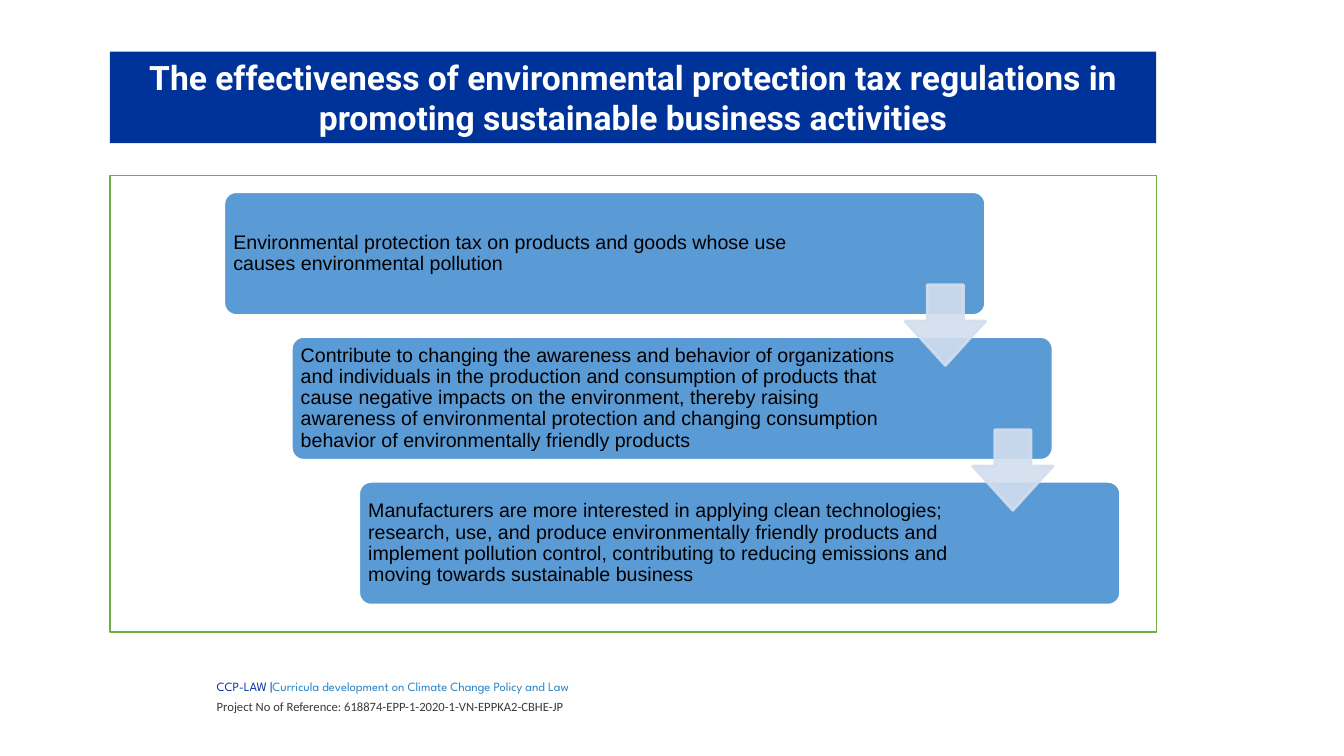
import pptx
import pptx.dml.color
import pptx.enum.shapes
import pptx.enum.text
import pptx.oxml.ns
import pptx.util
from lxml import etree

Cm, Pt = pptx.util.Cm, pptx.util.Pt
SHAPES = pptx.enum.shapes.MSO_SHAPE
ANCHOR = pptx.enum.text.MSO_ANCHOR
ALIGN = pptx.enum.text.PP_ALIGN

TITLE = ("The effectiveness of environmental protection tax regulations in "
         "promoting sustainable business activities")

# Wording and text width (cm) of each step in the cascade
STEPS = [
    ("Environmental protection tax on products and goods whose use causes "
     "environmental pollution", 15.82),
    ("Contribute to changing the awareness and behavior of organizations and "
     "individuals in the production and consumption of products that cause "
     "negative impacts on the environment, thereby raising awareness of "
     "environmental protection and changing consumption behavior of "
     "environmentally friendly products", 15.29),
    ("Manufacturers are more interested in applying clean technologies; "
     "research, use, and produce environmentally friendly products and "
     "implement pollution control, contributing to reducing emissions and "
     "moving towards sustainable business", 15.29),
]

FOOTER = [
    [("CCP-LAW |", "League Spartan", "003399"),
     ("Curricula development on Climate Change Policy and Law",
      "League Spartan", "2683C6")],
    [("Project No of Reference: 618874-EPP-1-2020-1-VN-EPPKA2-CBHE-JP",
      "Calibri", "3B3838")],
]


def rgb(value):
    return pptx.dml.color.RGBColor.from_string(value)


def set_opacity(shape, percent):
    """Make both the fill and the line of a shape partly transparent."""
    for color in shape._element.spPr.iter(pptx.oxml.ns.qn("a:srgbClr")):
        alpha = etree.SubElement(color, pptx.oxml.ns.qn("a:alpha"))
        alpha.set("val", str(percent * 1000))


class SlideBuilder:
    NAVY, BLUE, PALE, GREEN = "003399", "5B9BD5", "D2DEEF", "70AD47"
    WHITE, BLACK = "FFFFFF", "000000"

    def __init__(self, slide):
        self.slide = slide

    def shape(self, kind, left, top, width, height, fill, line=None,
              line_width=1, adjustments=()):
        shape = self.slide.shapes.add_shape(
            kind, Cm(left), Cm(top), Cm(width), Cm(height))
        shape.shadow.inherit = False
        shape.fill.solid()
        shape.fill.fore_color.rgb = rgb(fill)
        if line:
            shape.line.color.rgb = rgb(line)
            shape.line.width = Pt(line_width)
        else:
            shape.line.fill.background()
        for index, value in enumerate(adjustments):
            shape.adjustments[index] = value
        return shape

    def font(self, run, name, size, color, bold=False):
        run.font.name = name
        run.font.size = Pt(size)
        run.font.color.rgb = rgb(color)
        run.font.bold = bold

    def title(self, text, left, top, width, height):
        frame = self.shape(SHAPES.RECTANGLE, left, top, width, height,
                           self.NAVY).text_frame
        frame.text = text
        frame.word_wrap = True
        frame.vertical_anchor = ANCHOR.TOP
        paragraph = frame.paragraphs[0]
        paragraph.alignment = ALIGN.CENTER
        self.font(paragraph.runs[0], "Roboto", 24, self.WHITE, bold=True)

    def step(self, text, left, top, text_width):
        self.shape(SHAPES.ROUNDED_RECTANGLE, left, top, 19.2, 3.12,
                   self.BLUE, self.WHITE, 2, [0.1])
        frame = self.slide.shapes.add_textbox(
            Cm(left + 0.09), Cm(top + 0.09), Cm(text_width), Cm(2.94)).text_frame
        frame.text = text
        frame.word_wrap = True
        frame.vertical_anchor = ANCHOR.MIDDLE
        frame.margin_left = frame.margin_right = Cm(0.15)
        frame.margin_top = frame.margin_bottom = Cm(0.15)
        paragraph = frame.paragraphs[0]
        paragraph.line_spacing = 0.9
        self.font(paragraph.runs[0], "Arial", 14, self.BLACK)

    def arrow(self, left, top):
        arrow = self.shape(SHAPES.DOWN_ARROW, left, top, 2.03, 2.03,
                           self.PALE, self.PALE, 2)
        arrow.adjustments[0] = 0.45
        arrow.adjustments[1] = 0.55
        set_opacity(arrow, 90)

    def footer(self, lines, left, top, column_widths, height):
        table = self.slide.shapes.add_table(
            1, len(column_widths), Cm(left), Cm(top),
            Cm(sum(column_widths)), Cm(height)).table
        table.first_row = table.horz_banding = False
        for column, width in zip(table.columns, column_widths):
            column.width = Cm(width)
        for cell in table.iter_cells():
            cell.fill.background()
            cell.margin_left = cell.margin_right = Cm(0.18)
            cell.margin_top = cell.margin_bottom = 0
            cell.vertical_anchor = ANCHOR.MIDDLE
        frame = table.cell(0, 1).text_frame
        for index, line in enumerate(lines):
            paragraph = frame.add_paragraph() if index else frame.paragraphs[0]
            paragraph.line_spacing = 1.07
            if index:
                paragraph.space_before = Pt(3)
            for text, name, color in line:
                run = paragraph.add_run()
                run.text = text
                self.font(run, name, 9, color)


def main():
    presentation = pptx.Presentation()
    presentation.slide_width = Cm(33.87)
    presentation.slide_height = Cm(19.05)
    builder = SlideBuilder(
        presentation.slides.add_slide(presentation.slide_layouts[6]))

    builder.footer(FOOTER, 3.3, 16.94, [1.98, 9.5], 1.32)
    builder.title(TITLE, 2.77, 1.3, 26.37, 2.31)
    builder.shape(SHAPES.RECTANGLE, 2.77, 4.42, 26.37, 11.51,
                  builder.WHITE, builder.GREEN)

    shift_x, shift_y = 1.7, 3.65
    for index, (text, text_width) in enumerate(STEPS):
        builder.step(text, 5.64 + index * shift_x, 4.83 + index * shift_y,
                     text_width)
    for index in range(len(STEPS) - 1):
        builder.arrow(22.81 + index * shift_x, 7.18 + index * shift_y)

    presentation.save("out.pptx")


if __name__ == "__main__":
    main()
